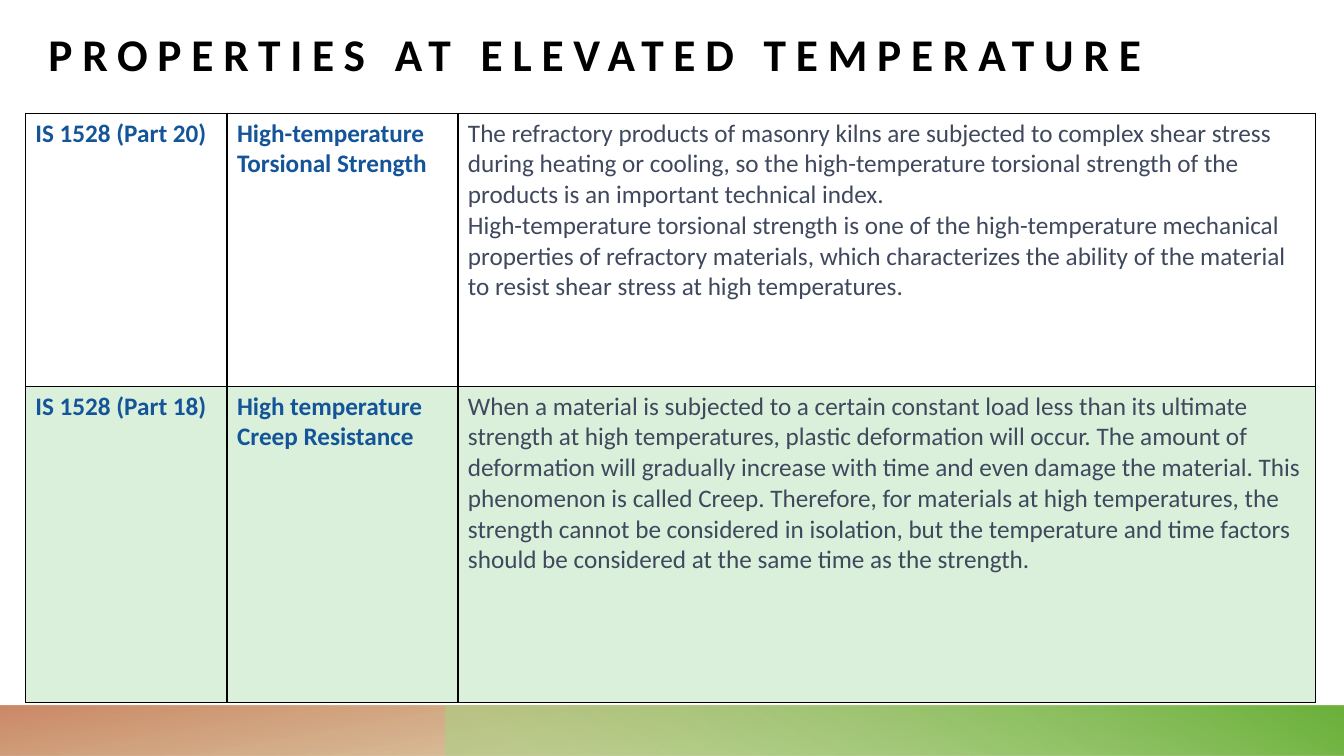
from dataclasses import dataclass

from pptx import Presentation
from pptx.dml.color import RGBColor
from pptx.enum.shapes import MSO_SHAPE
from pptx.enum.text import MSO_ANCHOR
from pptx.oxml import parse_xml
from pptx.oxml.ns import nsdecls
from pptx.util import Cm, Pt

FONT = "Calibri"
LABEL = {"size": Pt(18), "bold": True, "name": FONT}
BODY = {**LABEL, "bold": False}
TITLE = {**LABEL, "size": Pt(32.4)}
LABEL_COLOR, BODY_COLOR, TITLE_COLOR = "145499", "3F485D", "000000"
COL_WIDTHS = (5.08, 5.82, 21.61)


@dataclass(frozen=True)
class Stop:
    pos: int
    color: str
    alpha: int = 100


@dataclass(frozen=True)
class FooterBar:
    left: float
    width: float
    angle: int
    rotation: int
    stops: tuple[Stop, ...]


@dataclass(frozen=True)
class Standard:
    number: str
    name: str
    paragraphs: tuple[str, ...]
    height: float
    tinted: bool = False


BARS = (
    FooterBar(0, 33.87, 100, 180, (Stop(14, "B1933B", 28), Stop(100, "C3744D", 85))),
    FooterBar(11.22, 22.65, 240, 0, (Stop(9, "A6D684", 55), Stop(99, "6CB13B"))),
)

STANDARDS = (
    Standard(
        "IS 1528 (Part 20)",
        "High-temperature Torsional Strength",
        (
            "The refractory products of masonry kilns are subjected to complex shear "
            "stress during heating or cooling, so the high-temperature torsional "
            "strength of the products is an important technical index.",
            "High-temperature torsional strength is one of the high-temperature "
            "mechanical properties of refractory materials, which characterizes the "
            "ability of the material to resist shear stress at high temperatures.",
        ),
        6.88,
    ),
    Standard(
        "IS 1528 (Part 18)",
        "High temperature Creep Resistance",
        (
            "When a material is subjected to a certain constant load less than its "
            "ultimate strength at high temperatures, plastic deformation will occur. "
            "The amount of deformation will gradually increase with time and even "
            "damage the material. This phenomenon is called Creep. Therefore, for "
            "materials at high temperatures, the strength cannot be considered in "
            "isolation, but the temperature and time factors should be considered at "
            "the same time as the strength.",
        ),
        7.97,
        tinted=True,
    ),
)


def rgb(color: str) -> RGBColor:
    return RGBColor.from_string(color)


def color_xml(color: str, alpha: int = 100) -> str:
    return f'<a:srgbClr val="{color}"><a:alpha val="{alpha * 1000}"/></a:srgbClr>'


def write(tf, paragraphs: tuple[str, ...], fmt: dict, color: str) -> None:
    for i, text in enumerate(paragraphs):
        p = tf.paragraphs[0] if i == 0 else tf.add_paragraph()
        r = p.add_run()
        r.text = text
        for key, value in fmt.items():
            setattr(r.font, key, value)
        r.font.color.rgb = rgb(color)


def add_bar(slide, bar: FooterBar) -> None:
    sp = slide.shapes.add_shape(
        MSO_SHAPE.RECTANGLE, Cm(bar.left), Cm(17.78), Cm(bar.width), Cm(1.27)
    )
    sp.shadow.inherit = False
    sp.line.fill.background()
    sp.rotation = bar.rotation
    sp.fill.background()
    sp_pr = sp._element.spPr
    sp_pr.xfrm.set("flipH", "1")
    stops = "".join(
        f'<a:gs pos="{s.pos * 1000}">{color_xml(s.color, s.alpha)}</a:gs>'
        for s in bar.stops
    )
    gradient = parse_xml(
        f'<a:gradFill {nsdecls("a")} rotWithShape="1"><a:gsLst>{stops}</a:gsLst>'
        f'<a:lin ang="{bar.angle * 60000}" scaled="0"/></a:gradFill>'
    )
    sp_pr.replace(sp_pr.find("{*}noFill"), gradient)


def style_cell(cell, tinted: bool) -> None:
    """Set the thin black borders and the translucent green or empty fill."""
    fill = f"<a:solidFill>{color_xml('47B547', 20)}</a:solidFill>" if tinted else "<a:noFill/>"
    sides = [
        f'<a:{side} w="12700"><a:solidFill>{color_xml("000000")}</a:solidFill></a:{side}>'
        for side in ("lnL", "lnR", "lnT", "lnB")
    ]
    tc_pr = cell._tc.get_or_add_tcPr()
    for child in parse_xml(f'<a:tcPr {nsdecls("a")}>{"".join(sides)}{fill}</a:tcPr>'):
        tc_pr.append(child)


def add_standards(slide) -> None:
    frame = slide.shapes.add_table(
        len(STANDARDS), len(COL_WIDTHS), Cm(0.64), Cm(2.85),
        Cm(sum(COL_WIDTHS)), Cm(sum(s.height for s in STANDARDS)),
    )
    table = frame.table
    table.first_row = table.horz_banding = False
    for col, width in zip(table.columns, COL_WIDTHS):
        col.width = Cm(width)
    for row, standard in zip(table.rows, STANDARDS):
        row.height = Cm(standard.height)
        contents = (
            ((standard.number,), LABEL, LABEL_COLOR),
            ((standard.name,), LABEL, LABEL_COLOR),
            (standard.paragraphs, BODY, BODY_COLOR),
        )
        for cell, content in zip(row.cells, contents):
            write(cell.text_frame, *content)
            style_cell(cell, standard.tinted)


def add_title(slide, text: str) -> None:
    box = slide.shapes.add_textbox(Cm(0.97), Cm(0.71), Cm(29.69), Cm(1.45))
    tf = box.text_frame
    tf.word_wrap = True
    tf.vertical_anchor = MSO_ANCHOR.BOTTOM
    write(tf, (text,), TITLE, TITLE_COLOR)
    p = tf.paragraphs[0]
    p.line_spacing = 0.8
    p.runs[0]._r.get_or_add_rPr().set("spc", "700")


def main() -> None:
    prs = Presentation()
    prs.slide_width, prs.slide_height = Cm(33.87), Cm(19.05)
    slide = prs.slides.add_slide(prs.slide_layouts[6])
    for bar in BARS:
        add_bar(slide, bar)
    add_standards(slide)
    add_title(slide, "PROPERTIES AT ELEVATED TEMPERATURE")
    prs.save("out.pptx")


if __name__ == "__main__":
    main()
